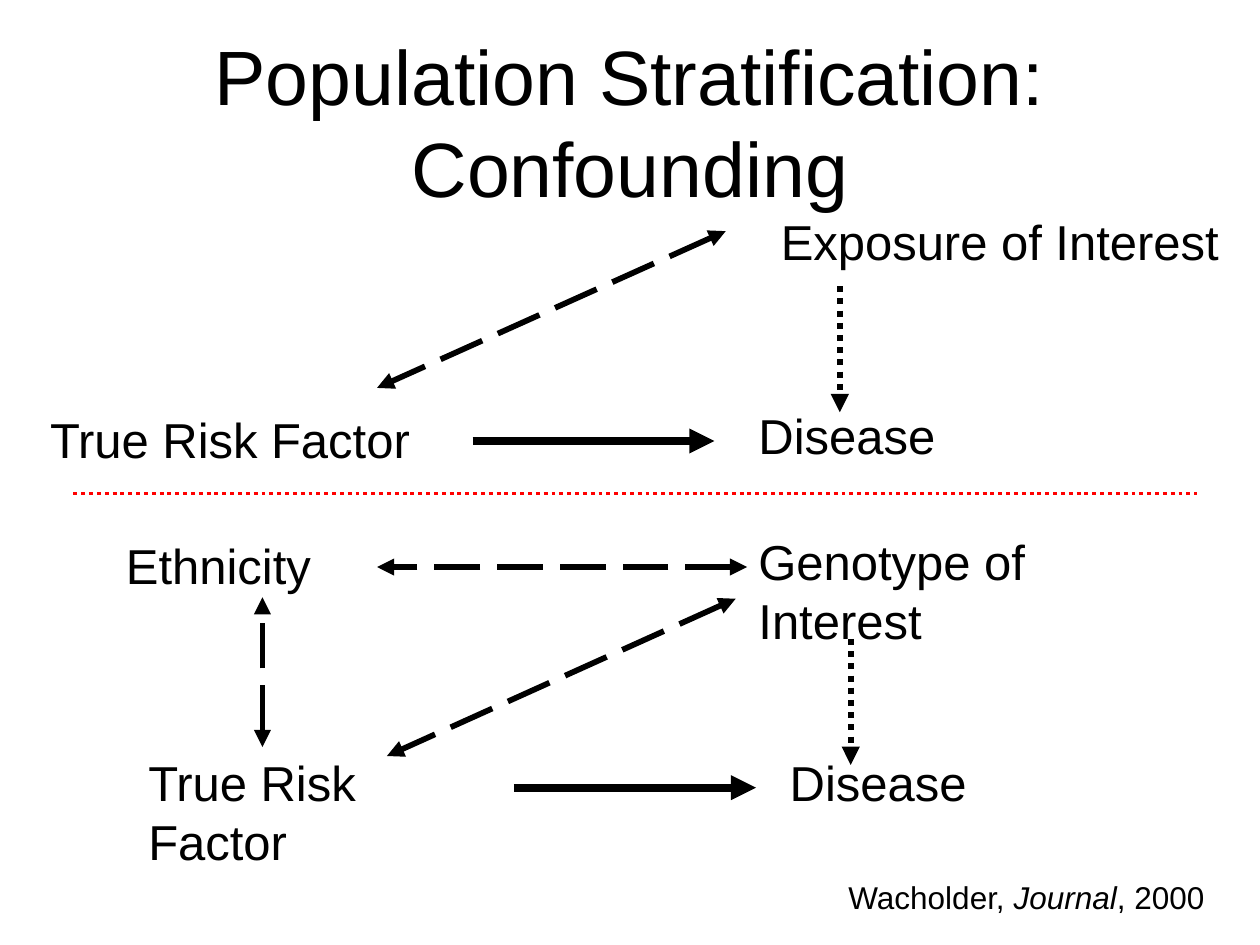
from lxml import etree
from pptx import Presentation
from pptx.dml.color import RGBColor
from pptx.enum import dml, shapes, text
from pptx.oxml import ns
from pptx.util import Cm, Pt

FONT, BLACK, RED = "Arial", "000000", "FF0000"
TITLE = "Population Stratification: Confounding"
TITLE_BOX = (0, 0.41, 25.4, 4.04)

# text, left, top, width, height (cm)
LABELS = [
    ("Exposure of Interest", 15.49, 4.14, 9.4, 1.45),
    ("True Risk Factor", 0.76, 8.13, 8.46, 1.45),
    ("Disease", 15.04, 8.05, 7.19, 1.45),
    ("Genotype of Interest", 15.04, 10.59, 8.89, 2.64),
    ("Disease", 15.67, 15.04, 7.19, 1.45),
    ("Ethnicity", 2.29, 10.67, 5.33, 1.45),
    ("True Risk Factor", 2.74, 15.04, 7.19, 2.64),
]
SOURCE = [("Wacholder, ", False), ("Journal", True), (", 2000", False)]
SOURCE_BOX = (10.36, 17.58, 14.17, 1.02)

# kind: colour, width (pt), dash, arrowheads
STYLES = {
    "causes": (BLACK, 4.75, None, ["tailEnd"]),
    "divider": (RED, 2.25, "sysDot", []),
    "apparent": (BLACK, 3.5, "sysDot", ["tailEnd"]),
    "linked": (BLACK, 3.25, "lgDash", ["headEnd", "tailEnd"]),
}
DASHES = {"sysDot": dml.MSO_LINE.ROUND_DOT, "lgDash": dml.MSO_LINE.LONG_DASH}

# kind, from x, from y, to x, to y (cm)
LINES = [
    ("causes", 9.53, 8.89, 14.4, 8.89),
    ("causes", 10.36, 15.88, 15.24, 15.88),
    ("divider", 1.48, 9.95, 24.13, 9.95),
    ("apparent", 17.15, 12.88, 17.15, 15.42),
    ("apparent", 16.93, 5.77, 16.93, 8.31),
    ("linked", 14.63, 4.66, 7.6, 7.82),
    ("linked", 14.83, 12.07, 7.8, 15.24),
    ("linked", 15.06, 11.43, 7.6, 11.43),
    ("linked", 5.29, 15.06, 5.29, 12.04),
]


def rgb(colour):
    return RGBColor.from_string(colour)


def write(shape, runs, size, align=text.PP_ALIGN.LEFT):
    """Fill a text shape with one paragraph of (wording, italic) runs."""
    tf = shape.text_frame
    tf.word_wrap = True
    p = tf.paragraphs[0]
    p.alignment = align
    for wording, italic in runs:
        r = p.add_run()
        r.text = wording
        font = {"name": FONT, "size": Pt(size), "italic": italic}
        for key, value in font.items():
            setattr(r.font, key, value)
        r.font.color.rgb = rgb(BLACK)
    return tf


def add_line(s, kind, *ends):
    colour, width, dash, heads = STYLES[kind]
    c = s.shapes.add_connector(shapes.MSO_CONNECTOR.STRAIGHT, *map(Cm, ends))
    c.line.color.rgb = rgb(colour)
    c.line.width = Pt(width)
    if dash:
        c.line.dash_style = DASHES[dash]
    ln = c.line._get_or_add_ln()
    for head in heads:
        etree.SubElement(ln, ns.qn("a:" + head), type="triangle")
    etree.SubElement(c._element.spPr, ns.qn("a:effectLst"))


def main():
    prs = Presentation()
    prs.slide_width, prs.slide_height = Cm(25.4), Cm(19.05)
    s = prs.slides.add_slide(prs.slide_layouts[5])

    title = s.shapes.title
    for key, value in zip(("left", "top", "width", "height"), TITLE_BOX):
        setattr(title, key, Cm(value))
    tf = write(title, [(TITLE, False)], 44, text.PP_ALIGN.CENTER)
    tf.vertical_anchor = text.MSO_ANCHOR.MIDDLE

    for wording, *box in LABELS:
        write(s.shapes.add_textbox(*map(Cm, box)), [(wording, False)], 28)
    for line in LINES:
        add_line(s, *line)
    source = s.shapes.add_textbox(*map(Cm, SOURCE_BOX))
    tf = write(source, SOURCE, 18, text.PP_ALIGN.RIGHT)
    tf.paragraphs[0].space_before = Pt(11.2)

    prs.save("out.pptx")


if __name__ == "__main__":
    main()
